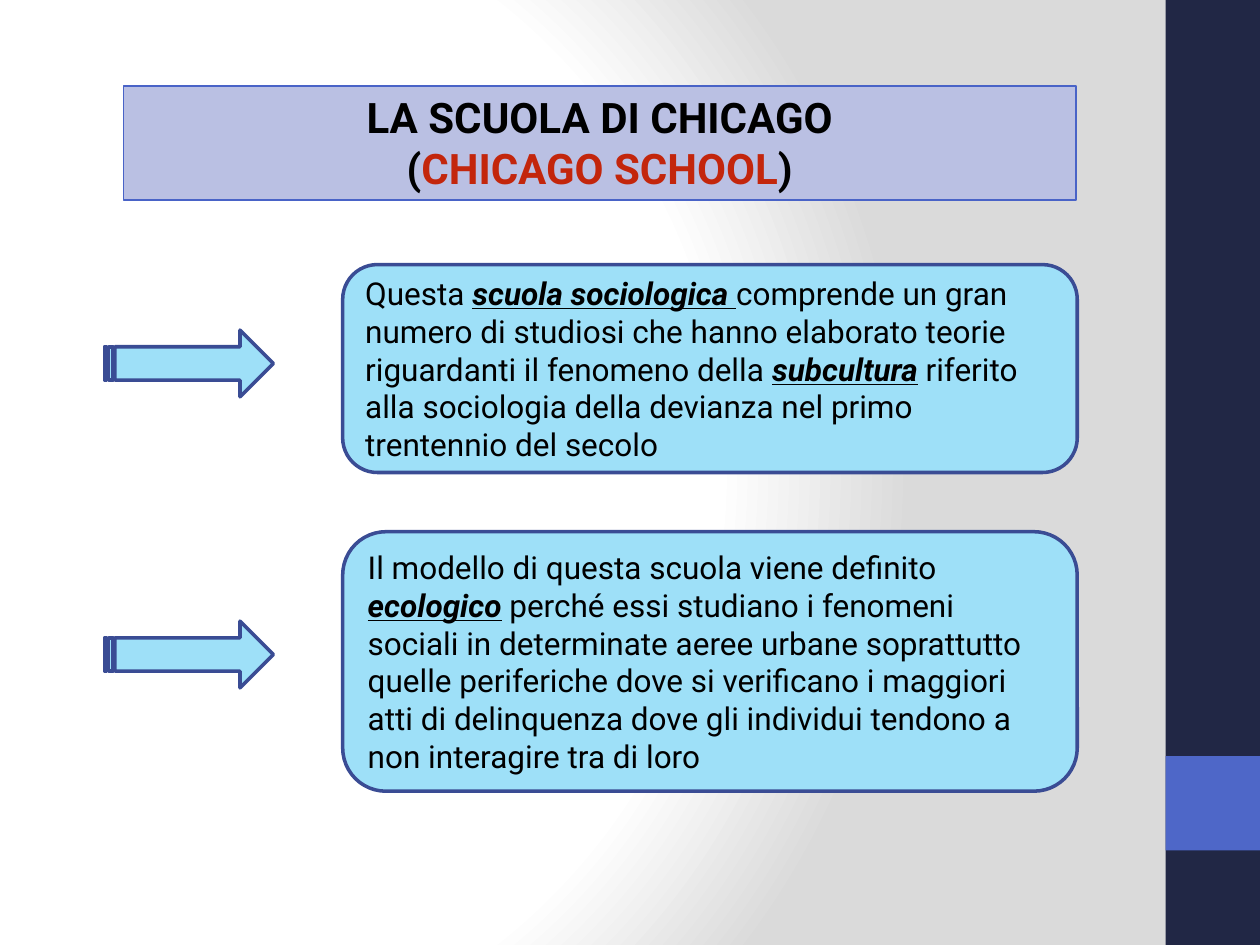
from lxml import etree
from pptx import Presentation
from pptx.dml.color import RGBColor
from pptx.enum import shapes, text
from pptx.oxml import ns
from pptx.util import Inches, Pt

FONT = "Roboto"
BLACK, RED = "000000", "C3260C"
NAVY, BLUE, LILAC, TITLE_EDGE = "212745", "4E67C8", "BAC0E3", "4963C7"
SKY, SKY_EDGE = "9EE0F8", "3A4C94"

TITLE = [
    [("LA SCUOLA DI CHICAGO", BLACK)],
    [("(", BLACK), ("CHICAGO SCHOOL", RED), (")", BLACK)],
]

# Each point: box top, box height, arrow top, and (wording, is key term) pieces.
POINTS = [
    (2.1, 1.65, 2.62, [
        ("Questa ", False),
        ("scuola sociologica ", True),
        ("comprende un gran numero di studiosi che hanno elaborato teorie "
         "riguardanti il fenomeno della ", False),
        ("subcultura", True),
        (" riferito alla sociologia della devianza nel primo trentennio "
         "del secolo", False),
    ]),
    (4.22, 2.06, 4.93, [
        ("Il modello di questa scuola viene definito ", False),
        ("ecologico", True),
        (" perché essi studiano i fenomeni sociali in determinate aeree urbane "
         "soprattutto quelle periferiche dove si verificano i maggiori atti di "
         "delinquenza dove gli individui tendono a non interagire tra di loro",
         False),
    ]),
]


def rgb(color):
    return RGBColor.from_string(color)


def set_background(slide):
    """Circular white-to-grey gradient, which needs XML for its path."""
    slide.background.fill.gradient()
    gradient = next(slide.element.iter(ns.qn("a:gradFill")))
    for child in list(gradient):
        gradient.remove(child)
    stops = etree.SubElement(gradient, ns.qn("a:gsLst"))
    for position, color in ((0, "FFFFFF"), (75, "FFFFFF"), (100, "DADADA")):
        stop = etree.SubElement(stops, ns.qn("a:gs"), pos=str(position * 1000))
        etree.SubElement(stop, ns.qn("a:srgbClr"), val=color)
    circle = etree.SubElement(gradient, ns.qn("a:path"), {"path": "circle"})
    etree.SubElement(circle, ns.qn("a:fillToRect"),
                     l="20000", t="50000", r="100000", b="50000")


def add_block(slide, kind, left, top, width, height, fill, edge=None, weight=1):
    block = slide.shapes.add_shape(
        kind, Inches(left), Inches(top), Inches(width), Inches(height))
    block.shadow.inherit = False
    block.fill.solid()
    block.fill.fore_color.rgb = rgb(fill)
    if edge:
        block.line.color.rgb = rgb(edge)
        block.line.width = Pt(weight)
    else:
        block.line.fill.background()
    return block


def add_run(paragraph, wording, size, color=BLACK):
    run = paragraph.add_run()
    run.text = wording
    run.font.name = FONT
    run.font.size = Pt(size)
    run.font.color.rgb = rgb(color)
    return run


def add_title(slide):
    banner = add_block(slide, shapes.MSO_SHAPE.RECTANGLE,
                       0.98, 0.68, 7.56, 0.91, LILAC, TITLE_EDGE)
    frame = banner.text_frame
    frame.word_wrap = True
    frame.auto_size = text.MSO_AUTO_SIZE.SHAPE_TO_FIT_TEXT
    frame.vertical_anchor = text.MSO_ANCHOR.TOP
    for index, line in enumerate(TITLE):
        paragraph = frame.add_paragraph() if index else frame.paragraphs[0]
        paragraph.alignment = text.PP_ALIGN.CENTER
        for wording, color in line:
            add_run(paragraph, wording, 24, color).font.bold = True


def add_point(slide, top, height, arrow_top, pieces):
    """Arrow and the rounded box it points to."""
    add_block(slide, shapes.MSO_SHAPE.STRIPED_RIGHT_ARROW,
              0.83, arrow_top, 1.34, 0.53, SKY, SKY_EDGE, 2)
    box = add_block(slide, shapes.MSO_SHAPE.ROUNDED_RECTANGLE,
                    2.72, top, 5.83, height, SKY, SKY_EDGE, 2)
    frame = box.text_frame
    frame.word_wrap = True
    frame.vertical_anchor = text.MSO_ANCHOR.MIDDLE
    paragraph = frame.paragraphs[0]
    paragraph.alignment = text.PP_ALIGN.LEFT
    for wording, is_key in pieces:
        font = add_run(paragraph, wording, 18).font
        font.bold = font.italic = font.underline = is_key


def main():
    deck = Presentation()
    deck.slide_width, deck.slide_height = Inches(10), Inches(7.5)
    slide = deck.slides.add_slide(deck.slide_layouts[6])
    set_background(slide)
    for top, height, color in ((0, 7.5, NAVY), (6, 0.75, BLUE)):
        add_block(slide, shapes.MSO_SHAPE.RECTANGLE, 9.25, top, 0.75, height, color)
    add_title(slide)
    for point in POINTS:
        add_point(slide, *point)
    deck.save("out.pptx")


if __name__ == "__main__":
    main()
